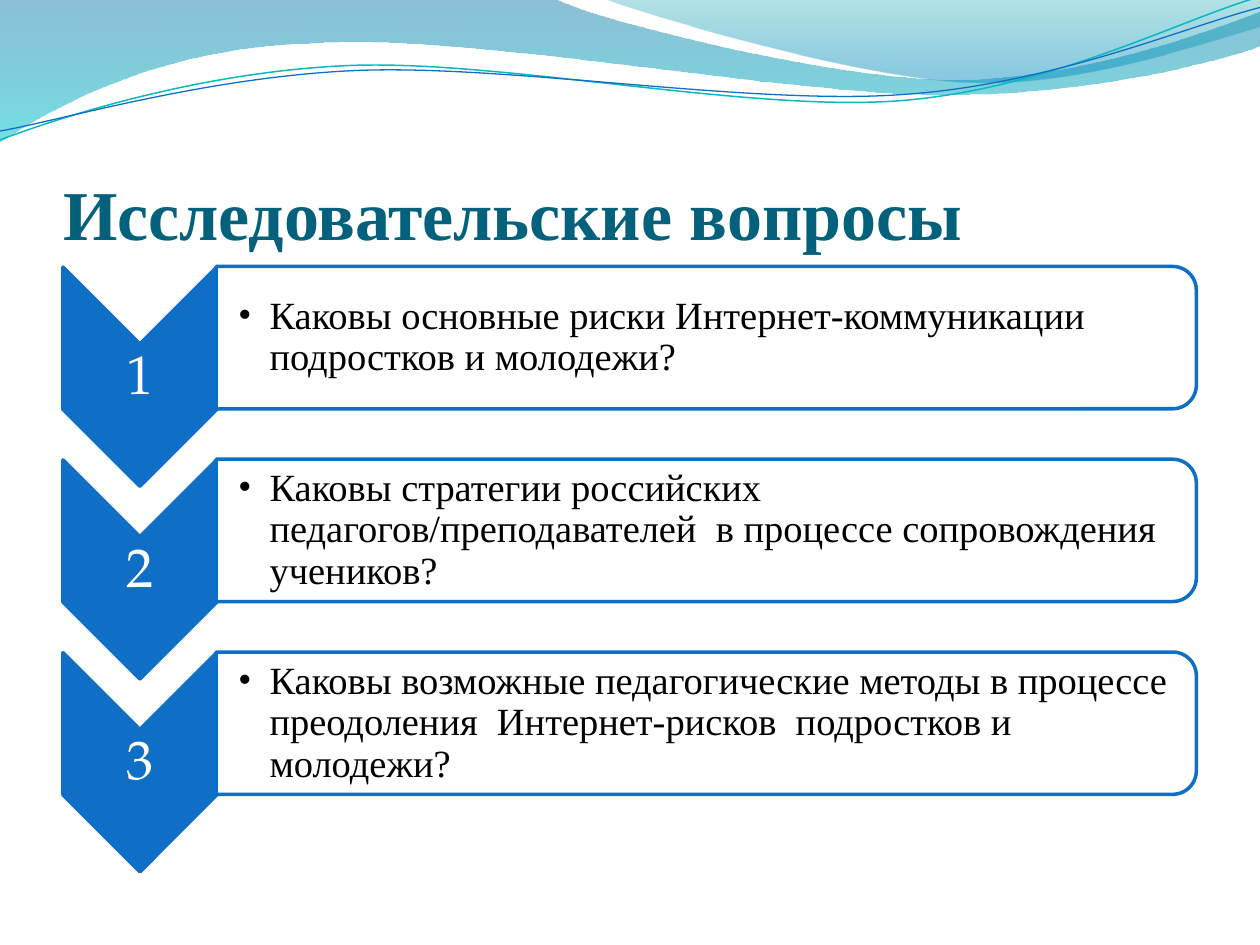
import math

from lxml import etree
from pptx import Presentation
from pptx.dml.color import RGBColor
from pptx.enum import shapes, text
from pptx.oxml import ns
from pptx.util import Inches, Pt

HUES = {
    "blue": "0F6FC6", "teal": "0AB8BF", "title": "04617B",
    "white": "FFFFFF", "black": "000000",
    "sea": "0074A1", "aqua": "00C6CF", "mint": "00A1A9", "sky": "008BBF",
}
RGB = {name: RGBColor.from_string(code) for name, code in HUES.items()}
SERIF = "Times New Roman"
TILT = 2.7

# Each path is a start point, then points (2 numbers) or Bezier curves (6).
BANDS = [
    ([(0, 0), (4.4, -0.01), (4.76, 0.17, 6.64, 0.63, 7.58, 0.63),
      (8.53, 0.63, 9.58, 0.26, 10, 0.09), (10.01, 0.36),
      (9.83, 0.44, 8.7, 0.76, 7.46, 0.75), (6.22, 0.75, 3.82, 0.28, 2.57, 0.34),
      (1.29, 0.36, 0.46, 0.83, -0.01, 1.13)],
     [(0, "sea", 45), (1, "aqua", 55)]),
    ([(4.79, -0.01), (5.09, 0.11, 6.82, 0.62, 7.69, 0.65),
      (8.56, 0.69, 9.61, 0.32, 10, 0.21), (10, 0)],
     [(0, "mint", 30), (0.8, "sky", 45)]),
]
# Path, middle of the wave, colour and width
WAVES = [
    ([(0, 1.11), (0.48, 0.93, 1.58, 0.57, 2.77, 0.52),
      (3.95, 0.47, 5.93, 0.89, 7.13, 0.8), (8.33, 0.71, 9.38, 0.15, 9.98, -0.02)],
     (4.99, 0.58), "teal", 0.85),
    ([(0, 1.04), (0.47, 0.96, 1.64, 0.61, 2.83, 0.56),
      (4.03, 0.51, 5.97, 0.84, 7.17, 0.75), (8.36, 0.67, 9.41, 0.21, 10, 0.06)],
     (5, 0.59), "blue", 0.75),
]
ASKS = [
    "Каковы основные риски Интернет-коммуникации подростков и молодежи?",
    "Каковы стратегии российских педагогов/преподавателей  в процессе сопровождения учеников?",
    "Каковы возможные педагогические методы в процессе преодоления  Интернет-рисков  подростков и молодежи?",
]

deck = Presentation()
deck.slide_width, deck.slide_height = Inches(10), Inches(7.5)
slide = deck.slides.add_slide(deck.slide_layouts[5])
tree = slide.shapes


def trace(home, path, close, mid=(0, 0), turn=0):
    """Draw a path as a freeform with true curves, turned about mid by turn degrees."""
    cos, sin = math.cos(math.radians(turn)), math.sin(math.radians(turn))
    dots = []
    for part in path:
        for x, y in zip(part[::2], part[1::2]):
            x, y = x - mid[0], y - mid[1]
            dots.append((Inches(mid[0] + x * cos - y * sin),
                         Inches(mid[1] + x * sin + y * cos)))
    pen = home.build_freeform(*dots[0])
    pen.add_line_segments(dots[1:], close=close)
    form = pen.convert_to_shape()
    lines = iter(list(form._element.iter(ns.qn("a:lnTo"))))
    for part in path[1:]:
        group = [next(lines) for _ in part[::2]]
        if len(group) == 3:
            curve = etree.Element(ns.qn("a:cubicBezTo"))
            group[0].addprevious(curve)
            for line in group:
                curve.append(line[0])
                line.getparent().remove(line)
    form.shadow.inherit = False
    return form


def write(box, words, size, font, hue, pads):
    """Fill a shape's text frame with one run and return its paragraph."""
    frame = box.text_frame
    frame.word_wrap = True
    frame.auto_size = text.MSO_AUTO_SIZE.NONE
    frame.vertical_anchor = text.MSO_ANCHOR.MIDDLE
    (frame.margin_left, frame.margin_top,
     frame.margin_right, frame.margin_bottom) = map(Inches, pads)
    para = frame.paragraphs[0]
    run = para.add_run()
    run.text = words
    run.font.size, run.font.name = Pt(size), font
    run.font.color.rgb = RGB[hue]
    return para


# Wavy header
for path, stops in BANDS:
    band = trace(tree, path, True)
    band.line.fill.background()
    band.fill.gradient()
    band.fill.gradient_angle = 270
    for stop, (place, hue, _) in zip(band.fill.gradient_stops, stops):
        stop.position = place
        stop.color.rgb = RGB[hue]
    for clr, (_, _, part) in zip(band._element.spPr.iter(ns.qn("a:srgbClr")), stops):
        etree.SubElement(clr, ns.qn("a:alpha"), val=str(part * 1000))
waves = tree.add_group_shape().shapes
for path, mid, hue, width in WAVES:
    wave = trace(waves, path, False, mid, TILT)
    wave.rotation = 360 - TILT
    wave.fill.background()
    wave.line.color.rgb = RGB[hue]
    wave.line.width = Pt(width)

# Title, in front of the header
title = tree.title
title._element.getparent().append(title._element)
title.left, title.top = Inches(0.5), Inches(0.77)
title.width, title.height = Inches(9), Inches(1.25)
head = write(title, "Исследовательские вопросы", 40, SERIF, "title", (0, 0.05, 0, 0))
head.alignment = text.PP_ALIGN.LEFT
head.runs[0].font.bold = True
title.text_frame.vertical_anchor = text.MSO_ANCHOR.BOTTOM

# Numbered questions
KINDS = shapes.MSO_SHAPE
chart = tree.add_group_shape().shapes
for row, ask in enumerate(ASKS):
    drop = row * 1.53
    blocks = []
    for kind, left, top, width, height, hue in [
        (KINDS.CHEVRON, 0.24, 2.38, 1.74, 1.22, "blue"),
        (KINDS.ROUND_2_SAME_RECTANGLE, 5.04, -1.21, 1.13, 7.78, "white"),
    ]:
        block = chart.add_shape(kind, Inches(left), Inches(top + drop),
                                Inches(width), Inches(height))
        block.rotation = 90
        block.shadow.inherit = False
        block.fill.solid()
        block.fill.fore_color.rgb = RGB[hue]
        block.line.color.rgb = RGB["blue"]
        block.line.width = Pt(2)
    clr = block._element.spPr.find(ns.qn("a:solidFill"))[0]
    etree.SubElement(clr, ns.qn("a:alpha"), val="90000")

    label = chart.add_textbox(Inches(0.5), Inches(2.73 + drop), Inches(1.22), Inches(0.52))
    para = write(label, str(row + 1), 31, "TeX Gyre Pagella", "white", [0.02] * 4)
    para.alignment = text.PP_ALIGN.CENTER
    para.line_spacing = 0.9

    body = chart.add_textbox(Inches(1.72), Inches(2.17 + drop), Inches(7.73), Inches(1.02))
    para = write(body, ask, 22, SERIF, "black", (0.17, 0.02, 0.02, 0.02))
    para.level = 1
    para.line_spacing = 0.9
    props = para._p.get_or_add_pPr()
    props.set("marL", str(Inches(0.25)))
    props.set("indent", str(Inches(-0.25)))
    etree.SubElement(props, ns.qn("a:buFont"), typeface=SERIF)
    etree.SubElement(props, ns.qn("a:buChar"), char="•")

deck.save("out.pptx")
